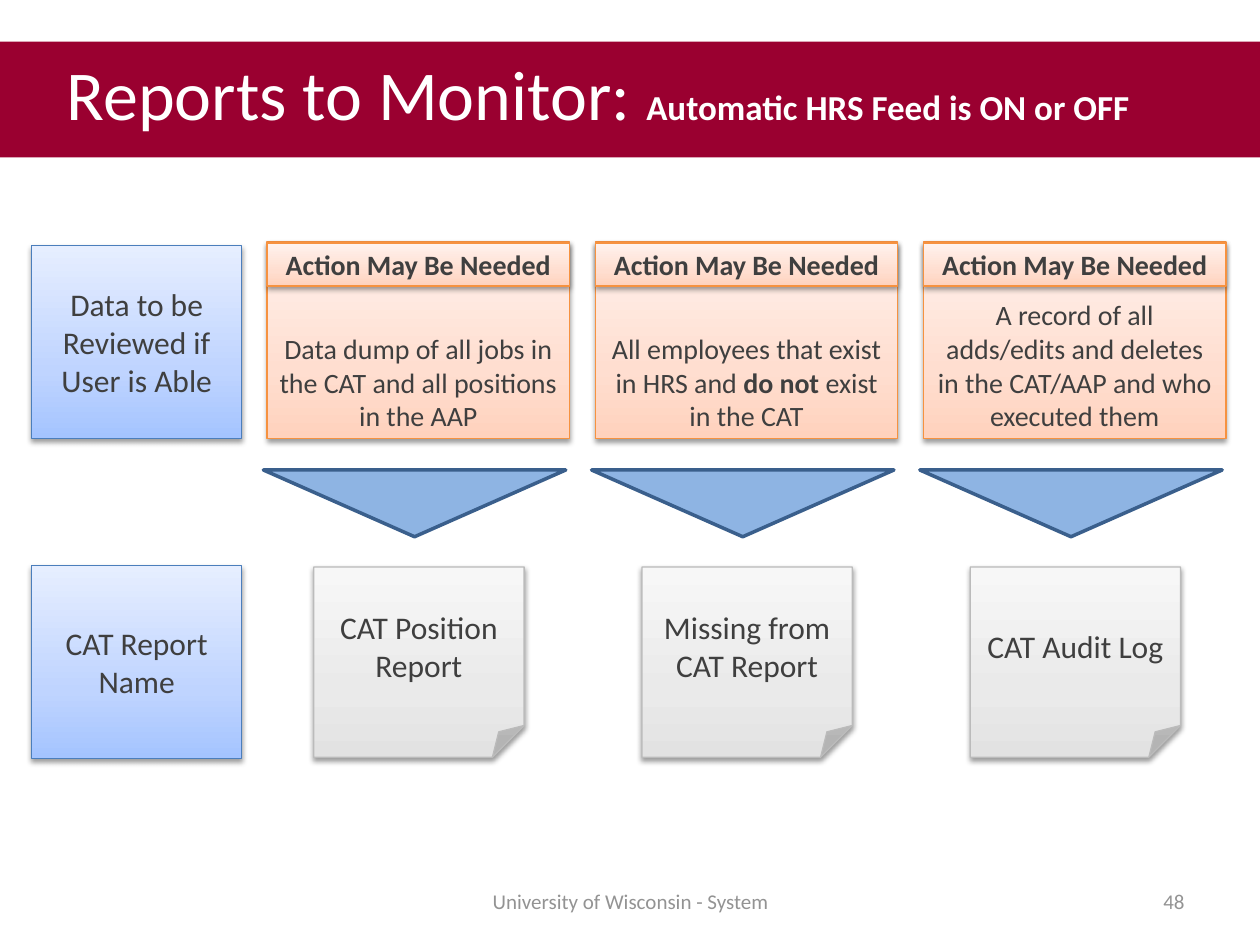
"""Build the slide on reports to monitor for the automatic HRS feed."""
from copy import deepcopy

from lxml import etree
from pptx import Presentation
from pptx import util as u
from pptx.dml.color import RGBColor
from pptx.enum import shapes, text
from pptx.oxml.ns import qn

COLORS = {
    "banner": "9A0030", "white": "FFFFFF", "ink": "3F3F3F", "footer": "939393",
    "arrow": "8EB4E3", "arrow_line": "3A5F8C",
    "blue_line": "4B7EBC", "gray_line": "BBBBBB", "orange_line": "F69240",
    "blue_0": "A4C4FF", "blue_1": "BFD4FF", "blue_2": "E6EEFF",
    "gray_0": "E2E2E2", "gray_1": "EAEAEA", "gray_2": "F7F7F7",
    "orange_0": "FFD2BD", "orange_1": "FFDED0", "orange_2": "FFF2ED",
}
PITCH = (7.33 - 2.12) / 2
COLUMNS = [
    ([("Data dump of all jobs in the CAT and all positions in the AAP", False)],
     "CAT Position Report"),
    ([("All employees that exist in HRS and ", False), ("do not ", True),
      ("exist in the CAT", False)],
     "Missing from CAT Report"),
    ([("A record of all adds/edits and deletes in the CAT/AAP and who executed them", False)],
     "CAT Audit Log"),
]


def color(name):
    """Return the named colour."""
    return RGBColor.from_string(COLORS[name])


def place(box):
    """Convert a box in inches to lengths."""
    return [u.Inches(value) for value in box]


class SlideBuilder:
    """Hold the text style and the current slide."""

    def __init__(self, slide, font="Calibri"):
        self.slide = slide
        self.font = font

    def add_text(self, shape, runs, align="CENTER", anchor="MIDDLE"):
        """Fill a shape with runs of (text, size, bold, colour)."""
        frame = shape.text_frame
        settings = {"word_wrap": True, "auto_size": text.MSO_AUTO_SIZE.NONE,
                    "vertical_anchor": text.MSO_ANCHOR[anchor]}
        for name, value in settings.items():
            setattr(frame, name, value)
        paragraph = frame.paragraphs[0]
        paragraph.alignment = text.PP_ALIGN[align]
        for words, size, bold, ink in runs:
            run = paragraph.add_run()
            run.text = words
            style = {"name": self.font, "size": u.Pt(size), "bold": bold}
            for name, value in style.items():
                setattr(run.font, name, value)
            run.font.color.rgb = color(ink)

    def banner(self, box, runs):
        """Turn the title placeholder into the banner."""
        title = self.slide.shapes.title
        for name, value in zip(("left", "top", "width", "height"), place(box)):
            setattr(title, name, value)
        title.fill.solid()
        title.fill.fore_color.rgb = color("banner")
        title.text_frame.margin_left = u.Inches(0.53)
        title.text_frame.margin_top = u.Inches(0.07)
        self.add_text(title, runs, "LEFT", "TOP")

    def label(self, box, words, align):
        """Add a footer text."""
        shape = self.slide.shapes.add_textbox(*place(box))
        self.add_text(shape, [(words, 12, False, "footer")], align)

    def shape(self, kind, box, line, width):
        """Add an outlined shape without the theme shadow."""
        shape = self.slide.shapes.add_shape(shapes.MSO_SHAPE[kind], *place(box))
        shape.shadow.inherit = False
        shape.line.color.rgb = color(line)
        shape.line.width = u.Pt(width)
        return shape

    def card(self, box, palette, runs, size=18, kind="RECTANGLE", anchor="MIDDLE"):
        """Add a gradient card with a soft shadow and runs of (text, bold)."""
        shape = self.shape(kind, box, f"{palette}_line", 0.75)
        self.gradient(shape, palette)
        self.cast_shadow(shape)
        self.add_text(shape, [(words, size, bold, "ink") for words, bold in runs], anchor=anchor)

    def gradient(self, shape, palette):
        """Fill a shape with the three stops of a palette, darkest at the bottom."""
        shape.fill.gradient()
        shape.fill.gradient_angle = 90
        stops = shape._element.spPr.find(qn("a:gradFill")).find(qn("a:gsLst"))
        stops.append(deepcopy(stops[0]))
        for index, (stop, position) in enumerate(zip(shape.fill.gradient_stops, (0, 0.35, 1))):
            stop.position = position
            stop.color.rgb = color(f"{palette}_{index}")

    def cast_shadow(self, shape):
        """Give a shape a soft shadow straight below."""
        effects = shape._element.spPr.find(qn("a:effectLst"))
        shadow = etree.SubElement(effects, qn("a:outerShdw"), blurRad=str(u.Pt(3.1)),
                                  dist=str(u.Pt(1.6)), dir="5400000", rotWithShape="0")
        black = etree.SubElement(shadow, qn("a:srgbClr"), val="000000")
        etree.SubElement(black, qn("a:alpha"), val="38000")

    def arrow(self, box):
        """Add a triangle pointing down."""
        shape = self.shape("ISOSCELES_TRIANGLE", box, "arrow_line", 2)
        shape.rotation = 180
        shape.fill.solid()
        shape.fill.fore_color.rgb = color("arrow")


def main():
    """Build and save the presentation."""
    presentation = Presentation()
    presentation.slide_width, presentation.slide_height = u.Inches(10), u.Inches(7.5)
    builder = SlideBuilder(presentation.slides.add_slide(presentation.slide_layouts[5]))

    builder.banner((0, 0.33, 10, 0.92), [
        ("Reports to Monitor: ", 40, False, "white"),
        ("Automatic HRS Feed is ON or OFF", 20, True, "white")])
    for top, words in ((1.95, "Data to be Reviewed if User is Able"), (4.49, "CAT Report Name")):
        builder.card((0.25, top, 1.67, 1.53), "blue", [(words, False)])

    for index, (description, report) in enumerate(COLUMNS):
        offset = index * PITCH
        builder.card((2.12 + offset, 1.92, 2.4, 1.56), "orange", description, 16, anchor="BOTTOM")
        builder.card((2.12 + offset, 1.93, 2.4, 0.34), "orange",
                     [("Action May Be Needed", True)], 16)
        builder.arrow((2.09 + offset, 3.73, 2.4, 0.53))
        builder.card((2.49 + offset, 4.5, 1.67, 1.51), "gray", [(report, False)],
                     kind="FOLDED_CORNER")

    builder.label((3.42, 6.95, 3.17, 0.4), "University of Wisconsin - System", "CENTER")
    builder.label((7.17, 6.95, 2.33, 0.4), "48", "RIGHT")
    presentation.save("out.pptx")


if __name__ == "__main__":
    main()
